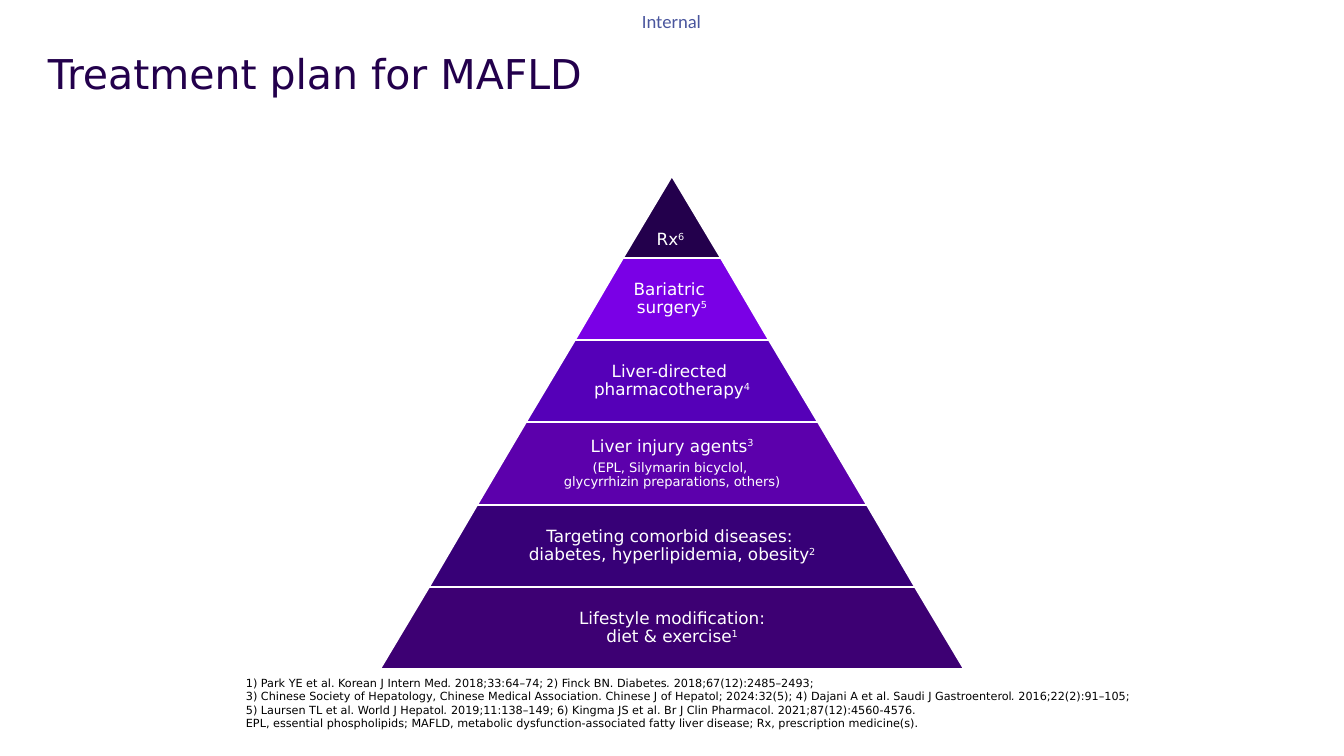
import dataclasses
import pptx
import pptx.dml.color
import pptx.enum.text
import pptx.util

PX = 914400 / 134.4
ALIGN = pptx.enum.text.PP_ALIGN
ANCHOR = pptx.enum.text.MSO_ANCHOR


@dataclasses.dataclass(frozen=True)
class Theme:
    font: str = "DejaVu Sans"
    label_font: str = "Calibri"
    title: str = "23004C"
    label: str = "4A569E"
    note: str = "000000"
    light: str = "FFFFFF"
    title_size: int = 22
    label_size: int = 10
    tier_size: int = 9
    detail_size: int = 7
    note_size: int = 6


THEME = Theme()
APEX_X, APEX_Y = 672, 176
PYRAMID_HEIGHT, HALF_BASE = 493, 292

# Each tier, from the top: fill, text, reference number, detail.
TIERS = [
    ("23004C", "", "", ""),
    ("7A00E6", "Bariatric \nsurgery", "5", ""),
    ("5500B8", "Liver-directed \npharmacotherapy", "4", ""),
    ("5C00AC", "Liver injury agents", "3",
     "(EPL, Silymarin bicyclol, \nglycyrrhizin preparations, others)"),
    ("370077", "Targeting comorbid diseases: \ndiabetes, hyperlipidemia, obesity", "2", ""),
    ("3D0073", "Lifestyle modification:\ndiet & exercise", "1", ""),
]

REFERENCES = [
    ("1) Park YE et al. Korean J Intern Med", ""), (".", "italic"),
    (" 2018;33:64–74; 2) Finck BN. Diabetes", ""), (".", "italic"),
    (" 2018;67(12):2485–2493;\n3) Chinese Society of Hepatology, Chinese Medical Association. "
     "Chinese J of Hepatol; 2024:32(5); 4) Dajani A et al. Saudi J Gastroenterol", ""),
    (".", "italic"),
    (" 2016;22(2):91–105;\n5) Laursen TL et al. World J Hepatol", ""), (". ", "italic"),
    ("2019;11:138–149; 6) Kingma JS et al. Br J Clin Pharmacol. 2021;87(12):4560-4576.", ""),
]
ABBREVIATIONS = ("EPL, essential phospholipids; MAFLD, metabolic dysfunction-associated "
                 "fatty liver disease; Rx, prescription medicine(s).")


def px(length):
    return pptx.util.Emu(round(length * PX))


def rgb(color):
    return pptx.dml.color.RGBColor.from_string(color)


def prepare_frame(frame, anchor, wrap=True):
    frame.margin_left = frame.margin_top = frame.margin_right = frame.margin_bottom = 0
    frame.vertical_anchor = anchor
    frame.word_wrap = wrap


def fill_paragraph(para, pieces, size, color, font=THEME.font, align=ALIGN.LEFT, spacing=None):
    """Write (text, style) pieces; a newline in a text is a line break."""
    para.alignment = align
    if spacing:
        para.line_spacing = spacing
    para.font.size = pptx.util.Pt(size)
    para.font.name = font
    para.font.color.rgb = rgb(color)
    for text, style in pieces:
        for index, line in enumerate(text.split("\n")):
            if index:
                para.add_line_break()
            span = para.add_run()
            span.text = line
            if style == "italic":
                span.font.italic = True
            elif style == "superscript":
                span._r.get_or_add_rPr().set("baseline", "30000")


def add_text(page, left, top, width, height, paragraphs, size, color,
             anchor=ANCHOR.TOP, wrap=True, **options):
    box = page.shapes.add_textbox(px(left), px(top), px(width), px(height))
    frame = box.text_frame
    prepare_frame(frame, anchor, wrap)
    for index, pieces in enumerate(paragraphs):
        para = frame.add_paragraph() if index else frame.paragraphs[0]
        fill_paragraph(para, pieces, size, color, **options)


def add_tier(page, index, color, text, number, detail):
    def edge(level):
        share = level / len(TIERS)
        return round(HALF_BASE * share), APEX_Y + round(PYRAMID_HEIGHT * share)

    upper_half, top = edge(index)
    lower_half, bottom = edge(index + 1)
    builder = page.shapes.build_freeform(APEX_X - lower_half, bottom, scale=PX)
    builder.add_line_segments([(APEX_X - upper_half, top), (APEX_X + upper_half, top),
                               (APEX_X + lower_half, bottom)])
    tier = builder.convert_to_shape()
    tier.shadow.inherit = False
    tier.fill.solid()
    tier.fill.fore_color.rgb = rgb(color)
    tier.line.color.rgb = rgb(THEME.light)
    tier.line.width = pptx.util.Pt(1)
    if not text:
        return
    frame = tier.text_frame
    prepare_frame(frame, ANCHOR.MIDDLE)
    para = frame.paragraphs[0]
    fill_paragraph(para, [(text, ""), (number, "superscript")], THEME.tier_size,
                   THEME.light, align=ALIGN.CENTER, spacing=0.9)
    if detail:
        para.space_after = pptx.util.Pt(3)
        fill_paragraph(frame.add_paragraph(), [(detail, "")], THEME.detail_size,
                       THEME.light, align=ALIGN.CENTER, spacing=0.9)


def main():
    deck = pptx.Presentation()
    deck.slide_width, deck.slide_height = px(1344), px(756)
    page = deck.slides.add_slide(deck.slide_layouts[6])
    add_text(page, 642, 10, 63, 23, [[("Internal", "")]], THEME.label_size, THEME.label,
             font=THEME.label_font, wrap=False)
    add_text(page, 48, 54, 1247, 106, [[("Treatment plan for MAFLD", "")]],
             THEME.title_size, THEME.title, spacing=0.9)
    add_text(page, 246, 682, 1048, 48, [REFERENCES, [(ABBREVIATIONS, "")]],
             THEME.note_size, THEME.note, anchor=ANCHOR.BOTTOM)
    for index, tier in enumerate(TIERS):
        add_tier(page, index, *tier)
    add_text(page, 654, 231, 33, 19, [[("Rx", ""), ("6", "superscript")]],
             THEME.tier_size, THEME.light, wrap=False, align=ALIGN.CENTER, spacing=0.9)
    deck.save("out.pptx")


if __name__ == "__main__":
    main()
